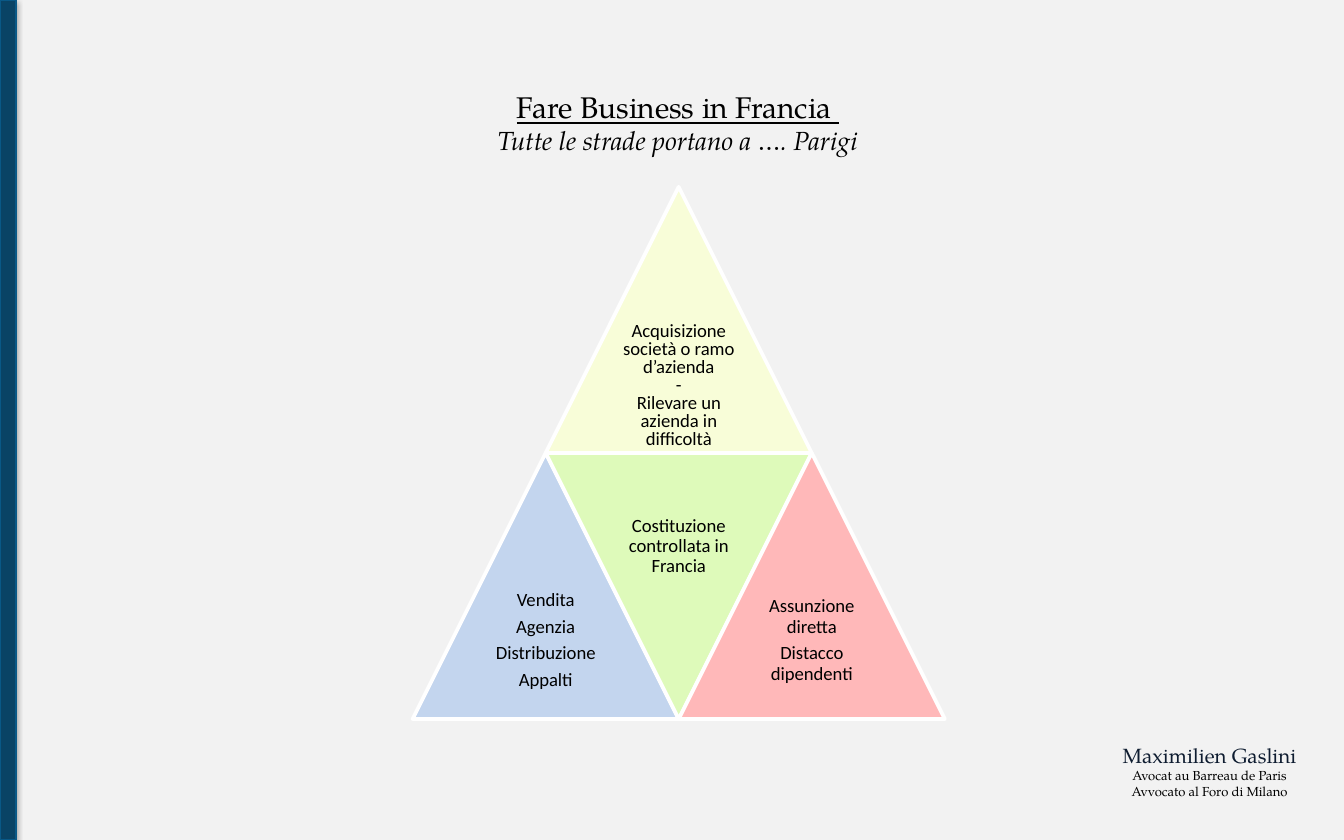
from dataclasses import dataclass

from lxml.etree import SubElement
from pptx import Presentation
from pptx.dml.color import RGBColor
from pptx.enum.shapes import MSO_SHAPE
from pptx.enum.text import MSO_ANCHOR, PP_ALIGN
from pptx.oxml.ns import qn
from pptx.util import Inches, Pt

SERIF = "TeX Gyre Pagella"
SANS = "Calibri"
SIDE = 1.98
HALF = SIDE / 2
LEFT, TOP = 3.07, 1.39


@dataclass
class Tile:
    """One triangle of the pyramid, placed in half-side steps, with its text."""

    column: int
    row: int
    fill: str
    lines: list[str]
    rotation: int = 0
    text_top: float = HALF
    line_spacing: float = 0.9
    space_after: float = 3.5


TILES = [
    Tile(1, 0, "F8FDD8",
         ["Acquisizione società o ramo d’azienda", "-", "Rilevare un azienda in difficoltà"],
         line_spacing=0.8, space_after=0),
    Tile(0, 1, "C3D5EE", ["Vendita", "Agenzia", "Distribuzione", "Appalti"],
         text_top=HALF - 0.09),
    Tile(1, 1, "DEFABA", ["Costituzione controllata in Francia"],
         rotation=180, text_top=0.2),
    Tile(2, 1, "FFB8B9", ["Assunzione diretta", "Distacco dipendenti"],
         text_top=HALF - 0.09),
]


def color(value: str) -> RGBColor:
    """Turn a hex string into a colour."""
    return RGBColor.from_string(value)


def add_figure(page, kind, left: float, top: float, width: float, height: float,
               fill: str, line: str, weight: float):
    """Draw a filled and outlined preset shape."""
    shape = page.shapes.add_shape(kind, Inches(left), Inches(top), Inches(width), Inches(height))
    shape.shadow.inherit = False
    shape.fill.solid()
    shape.fill.fore_color.rgb = color(fill)
    shape.line.color.rgb = color(line)
    shape.line.width = Pt(weight)
    return shape


def add_box(page, left: float, top: float, width: float, height: float,
            margins: tuple[float, float] = (0.1, 0.05), anchor=MSO_ANCHOR.TOP, wrap: bool = True):
    """Add an empty text box and return its frame."""
    box = page.shapes.add_textbox(Inches(left), Inches(top), Inches(width), Inches(height))
    frame = box.text_frame
    frame.word_wrap = wrap
    frame.vertical_anchor = anchor
    frame.margin_left = frame.margin_right = Inches(margins[0])
    frame.margin_top = frame.margin_bottom = Inches(margins[1])
    return frame


def write(frame, text: str, *, size: float, font: str = SERIF, ink: str = "000000",
          underline: bool = False, italic: bool = False,
          line_spacing: float = 1.0, space_after: float = 0) -> None:
    """Add one centred paragraph to a frame."""
    first = frame.paragraphs[0]
    para = frame.add_paragraph() if first.runs else first
    para.alignment = PP_ALIGN.CENTER
    para.line_spacing = line_spacing
    para.space_after = Pt(space_after)
    span = para.add_run()
    span.text = text
    span.font.name = font
    span.font.size = Pt(size)
    span.font.color.rgb = color(ink)
    span.font.underline = underline
    span.font.italic = italic


def add_shadow(shape, blur: float, distance: float, angle: int, opacity: int) -> None:
    """Give a shape a soft black outer shadow."""
    effects = shape.element.spPr.find(qn("a:effectLst"))
    shadow = SubElement(effects, qn("a:outerShdw"), blurRad=str(Pt(blur)),
                        dist=str(Pt(distance)), dir=str(angle * 60000), rotWithShape="0")
    tint = SubElement(shadow, qn("a:srgbClr"), val="000000")
    SubElement(tint, qn("a:alpha"), val=str(opacity * 1000))


def add_tile(page, tile: Tile) -> None:
    """Draw a triangle and the text inside it."""
    left, top = LEFT + tile.column * HALF, TOP + tile.row * SIDE
    triangle = add_figure(page, MSO_SHAPE.ISOSCELES_TRIANGLE, left, top, SIDE, SIDE,
                          tile.fill, "FFFFFF", 2)
    triangle.rotation = tile.rotation
    frame = add_box(page, left + HALF / 2, top + tile.text_top, HALF, HALF,
                    (0.04, 0.04), MSO_ANCHOR.MIDDLE)
    for text in tile.lines:
        write(frame, text, size=10, font=SANS, line_spacing=tile.line_spacing,
              space_after=tile.space_after)


def main() -> None:
    """Build the slide and save it."""
    deck = Presentation()
    deck.slide_width, deck.slide_height = Inches(10), Inches(6.25)
    page = deck.slides.add_slide(deck.slide_layouts[6])
    page.background.fill.solid()
    page.background.fill.fore_color.rgb = color("F2F2F2")

    title = add_box(page, 0.88, 0.61, 8.33, 0.61)
    write(title, "Fare Business in Francia ", size=16, underline=True)
    write(title, "Tutte le strade portano a …. Parigi", size=14, italic=True)

    signature = add_box(page, 8.26, 5.49, 1.48, 0.5, (0.08, 0.04), wrap=False)
    write(signature, "Maximilien Gaslini", size=11, ink="0E1C30")
    for text in ("Avocat au Barreau de Paris", "Avvocato al Foro di Milano"):
        write(signature, text, size=7)

    for tile in TILES:
        add_tile(page, tile)

    stripe = add_figure(page, MSO_SHAPE.RECTANGLE, 0, 0, 0.12, 6.25, "094365", "095886", 0.75)
    add_shadow(stripe, blur=3.1, distance=1.8, angle=90, opacity=35)
    deck.save("out.pptx")


if __name__ == "__main__":
    main()
